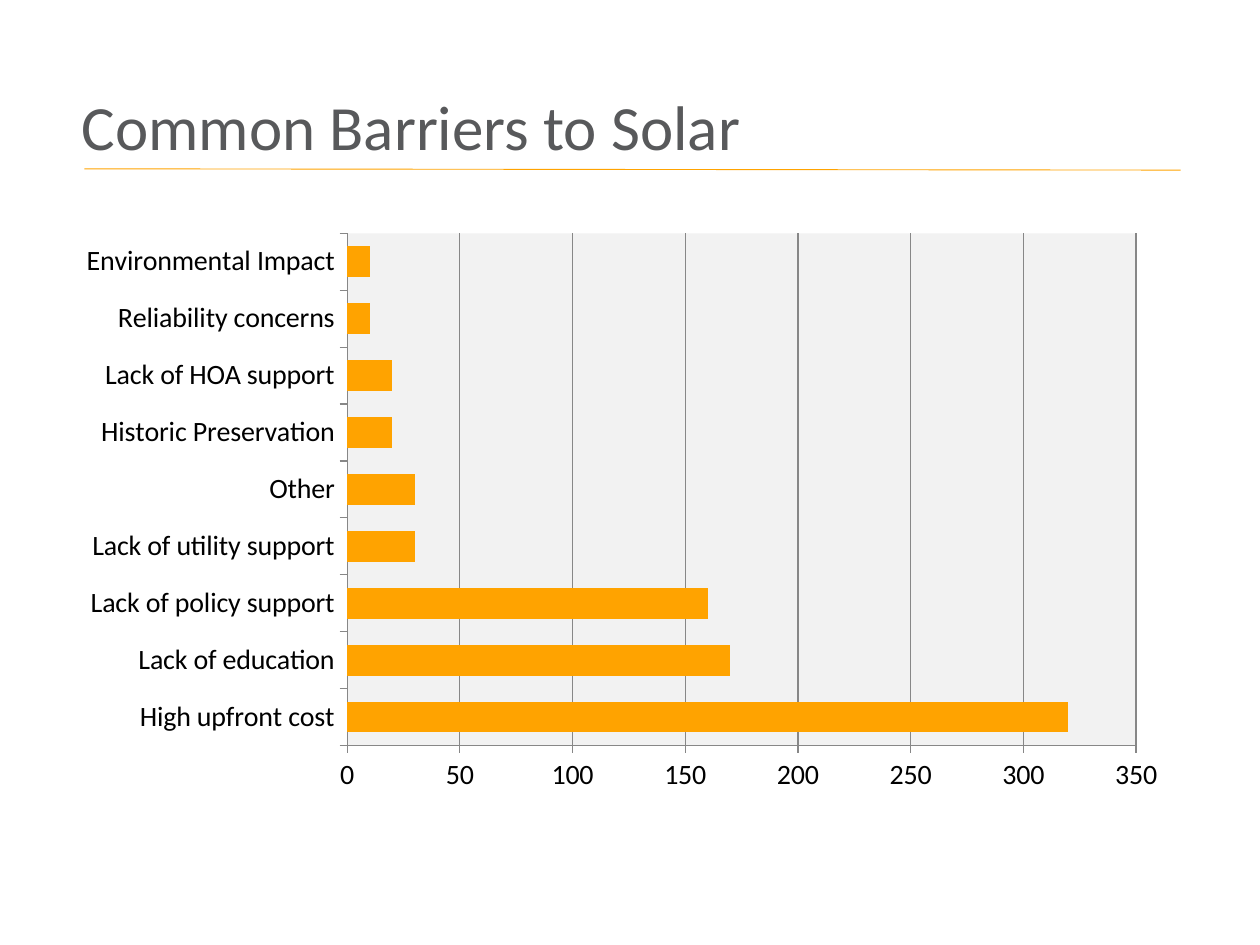
from dataclasses import dataclass

from lxml.etree import SubElement
from pptx import Presentation
from pptx.chart.data import CategoryChartData
from pptx.dml.color import RGBColor
from pptx.enum.chart import XL_CHART_TYPE as ChartType, XL_TICK_MARK as Tick
from pptx.enum.shapes import MSO_CONNECTOR as Connector
from pptx.enum.text import MSO_ANCHOR as Anchor, PP_ALIGN as Align
from pptx.oxml import parse_xml
from pptx.oxml.ns import nsdecls, qn
from pptx.util import Inches, Pt

COLORS = {"title": "58595B", "accent": "FFA300", "plot": "F2F2F2",
          "axis": "878787", "text": "000000"}
FONT = "Calibri"


@dataclass(frozen=True)
class Barrier:
    label: str
    votes: int


BARRIERS = [
    Barrier("High upfront cost", 320),
    Barrier("Lack of education", 170),
    Barrier("Lack of policy support", 160),
    Barrier("Lack of utility support", 30),
    Barrier("Other", 30),
    Barrier("Historic Preservation", 20),
    Barrier("Lack of HOA support", 20),
    Barrier("Reliability concerns", 10),
    Barrier("Environmental Impact", 10),
]


def rgb(name: str) -> RGBColor:
    return RGBColor.from_string(COLORS[name])


def add_title(s, text: str) -> None:
    sp = s.shapes.title
    sp.left, sp.top, sp.width, sp.height = map(Inches, (0.55, 0.73, 8.84, 0.6))
    tf = sp.text_frame
    tf.word_wrap = True
    tf.vertical_anchor = Anchor.MIDDLE
    p = tf.paragraphs[0]
    p.alignment = Align.LEFT
    p.line_spacing = 0.9
    r = p.add_run()
    r.text = text
    r.font.size, r.font.name = Pt(36), FONT
    r.font.color.rgb = rgb("title")


def add_rule(s) -> None:
    ends = map(Inches, (0.67, 1.34, 9.37, 1.35))
    line = s.shapes.add_connector(Connector.STRAIGHT, *ends)
    line.line.color.rgb = rgb("accent")
    line.line.width = Pt(0.5)
    SubElement(line._element.spPr, qn("a:effectLst"))


def style_axis(axis) -> None:
    axis.major_tick_mark = Tick.OUTSIDE
    axis.minor_tick_mark = Tick.NONE
    axis.format.line.color.rgb = rgb("axis")
    font = axis.tick_labels.font
    font.size, font.name = Pt(16), FONT
    font.color.rgb = rgb("text")


def style_plot_area(chart, x: float, y: float, w: float, h: float) -> None:
    """Place the inner plot by shares of the chart's size and fill it."""
    area = chart._chartSpace.chart.plotArea
    for old in area.findall(qn("c:layout")):
        area.remove(old)
    shares = "".join(f'<c:{tag} val="{share}"/>' for tag, share in
                     zip("xywh", (x, y, w, h)))
    area.insert(0, parse_xml(
        f'<c:layout {nsdecls("c")}><c:manualLayout>'
        '<c:layoutTarget val="inner"/><c:xMode val="edge"/><c:yMode val="edge"/>'
        f'{shares}</c:manualLayout></c:layout>'))
    area.append(parse_xml(
        f'<c:spPr {nsdecls("c", "a")}><a:solidFill>'
        f'<a:srgbClr val="{COLORS["plot"]}"/></a:solidFill></c:spPr>'))


def add_barrier_chart(s, barriers: list[Barrier]) -> None:
    data = CategoryChartData()
    data.categories = [b.label for b in barriers]
    data.add_series("Series 1", [b.votes for b in barriers])
    box = map(Inches, (0.55, 1.76, 8.82, 4.62))
    chart = s.shapes.add_chart(ChartType.BAR_CLUSTERED, *box, data).chart
    chart.has_legend = chart.has_title = False
    chart.font.size, chart.font.name = Pt(10), "Arial"
    chart.font.color.rgb = rgb("text")

    plot = chart.plots[0]
    plot.gap_width = 85
    plot.vary_by_categories = False
    fill = plot.series[0].format.fill
    fill.solid()
    fill.fore_color.rgb = rgb("accent")

    values = chart.value_axis
    for axis in (chart.category_axis, values):
        style_axis(axis)
    values.minimum_scale, values.maximum_scale, values.major_unit = 0, 350, 50
    values.has_major_gridlines = True
    values.major_gridlines.format.line.color.rgb = rgb("axis")
    style_plot_area(chart, 0.25, 0.02, 0.71, 0.88)


def main() -> None:
    prs = Presentation()
    prs.slide_width, prs.slide_height = Inches(10), Inches(7.5)
    s = prs.slides.add_slide(prs.slide_layouts[5])
    add_rule(s)
    add_title(s, "Common Barriers to Solar")
    add_barrier_chart(s, BARRIERS)
    prs.save("out.pptx")


if __name__ == "__main__":
    main()
